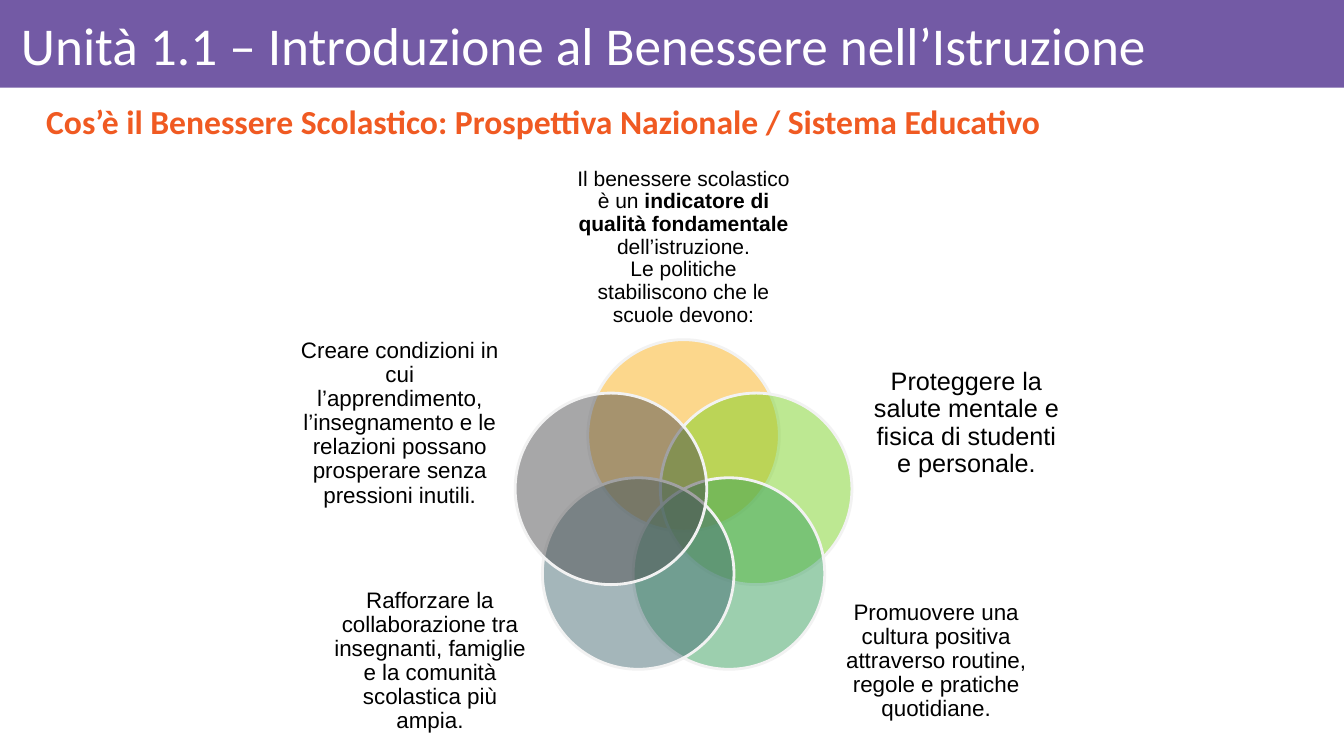
"""Build the slide on school wellbeing with its five-circle Venn diagram."""
from dataclasses import dataclass
from math import cos, radians, sin

from lxml import etree
from pptx import Presentation
from pptx import util as u
from pptx.dml.color import RGBColor
from pptx.enum import shapes, text
from pptx.oxml.ns import qn

PX = 9144
HUB = (678, 508)
ORBIT = 76
SIZE = 190


@dataclass
class Petal:
    color: str
    box: tuple[int, int, int, int]
    size: int
    words: str


PETALS = [
    Petal("FAAE15", (568, 182, 220, 127), 15,
          "Il benessere scolastico è un **indicatore di qualità fondamentale** dell’istruzione.\n"
          "Le politiche stabiliscono che le scuole devono:"),
    Petal("79D121", (860, 351, 197, 138), 18,
          "Proteggere la salute mentale e fisica di studenti e personale."),
    Petal("369F5A", (830, 587, 197, 138), 16,
          "Promuovere una cultura positiva attraverso routine, regole e pratiche quotidiane."),
    Petal("466C73", (328, 587, 197, 138), 16,
          "Rafforzare la collaborazione tra insegnanti, famiglie e la comunità scolastica più ampia."),
    Petal("4D4D4F", (298, 351, 197, 138), 16,
          "Creare condizioni in cui l’apprendimento, l’insegnamento e le relazioni possano "
          "prosperare senza pressioni inutili."),
]


def px(*vals: int) -> list[u.Emu]:
    return [u.Emu(v * PX) for v in vals]


def rgb(code: str) -> RGBColor:
    return RGBColor.from_string(code)


def shape(slide, kind, box: tuple, color: str):
    item = slide.shapes.add_shape(kind, *px(*box))
    item.shadow.inherit = False
    item.fill.solid()
    item.fill.fore_color.rgb = rgb(color)
    item.line.fill.background()
    return item


def write(slide, box: tuple, words: str, *, size: int, font: str = "Arial",
          color: str = "000000", bold: bool = False, align=text.PP_ALIGN.CENTER,
          inset: tuple = (0, 0, 0, 0), before: int = 0, left: int = 0, hang: int = 0) -> None:
    frame = slide.shapes.add_textbox(*px(*box)).text_frame
    frame.word_wrap = True
    frame.vertical_anchor = text.MSO_ANCHOR.MIDDLE
    (frame.margin_left, frame.margin_top,
     frame.margin_right, frame.margin_bottom) = px(*inset)
    for row, line in enumerate(words.split("\n")):
        para = frame.add_paragraph() if row else frame.paragraphs[0]
        para.alignment = align
        para.line_spacing = 0.9
        para.space_before = u.Pt(before)
        if left:
            props = para._p.get_or_add_pPr()
            props.set("marL", str(left * PX))
            props.set("indent", str(-hang * PX))
        for part, chunk in enumerate(line.split("**")):
            run = para.add_run()
            run.text = chunk
            run.font.name = font
            run.font.size = u.Pt(size)
            run.font.bold = bold or part % 2 == 1
            run.font.color.rgb = rgb(color)


def disc(slide, step: int, color: str) -> None:
    turn = radians(72 * step)
    x = round(HUB[0] + ORBIT * sin(turn) - SIZE / 2)
    y = round(HUB[1] - ORBIT * cos(turn) - SIZE / 2)
    item = shape(slide, shapes.MSO_SHAPE.OVAL, (x, y, SIZE, SIZE), color)
    tint = item.fill._xPr.find(qn("a:solidFill"))[0]
    etree.SubElement(tint, qn("a:alpha")).set("val", "49000")
    item.line.color.rgb = rgb("F2F2F2")
    item.line.width = u.Pt(2)


def main() -> None:
    deck = Presentation()
    deck.slide_width, deck.slide_height = px(1333, 750)
    slide = deck.slides.add_slide(deck.slide_layouts[6])
    shape(slide, shapes.MSO_SHAPE.RECTANGLE, (0, 0, 1333, 87), "735AA5")
    write(slide, (11, 9, 1306, 78), "Unità 1.1 – Introduzione al Benessere nell’Istruzione",
          size=38, font="Calibri", color="FFFFFF", align=text.PP_ALIGN.LEFT,
          inset=(10, 6, 6, 6))
    write(slide, (11, 93, 1306, 60),
          "Cos’è il Benessere Scolastico: Prospettiva Nazionale / Sistema Educativo",
          size=24, font="Calibri", color="F05A22", bold=True, align=text.PP_ALIGN.JUSTIFY,
          inset=(10, 5, 10, 5), before=10, left=50, hang=25)
    for step, petal in enumerate(PETALS):
        disc(slide, step, petal.color)
        write(slide, petal.box, petal.words, size=petal.size)
    deck.save("out.pptx")


if __name__ == "__main__":
    main()
